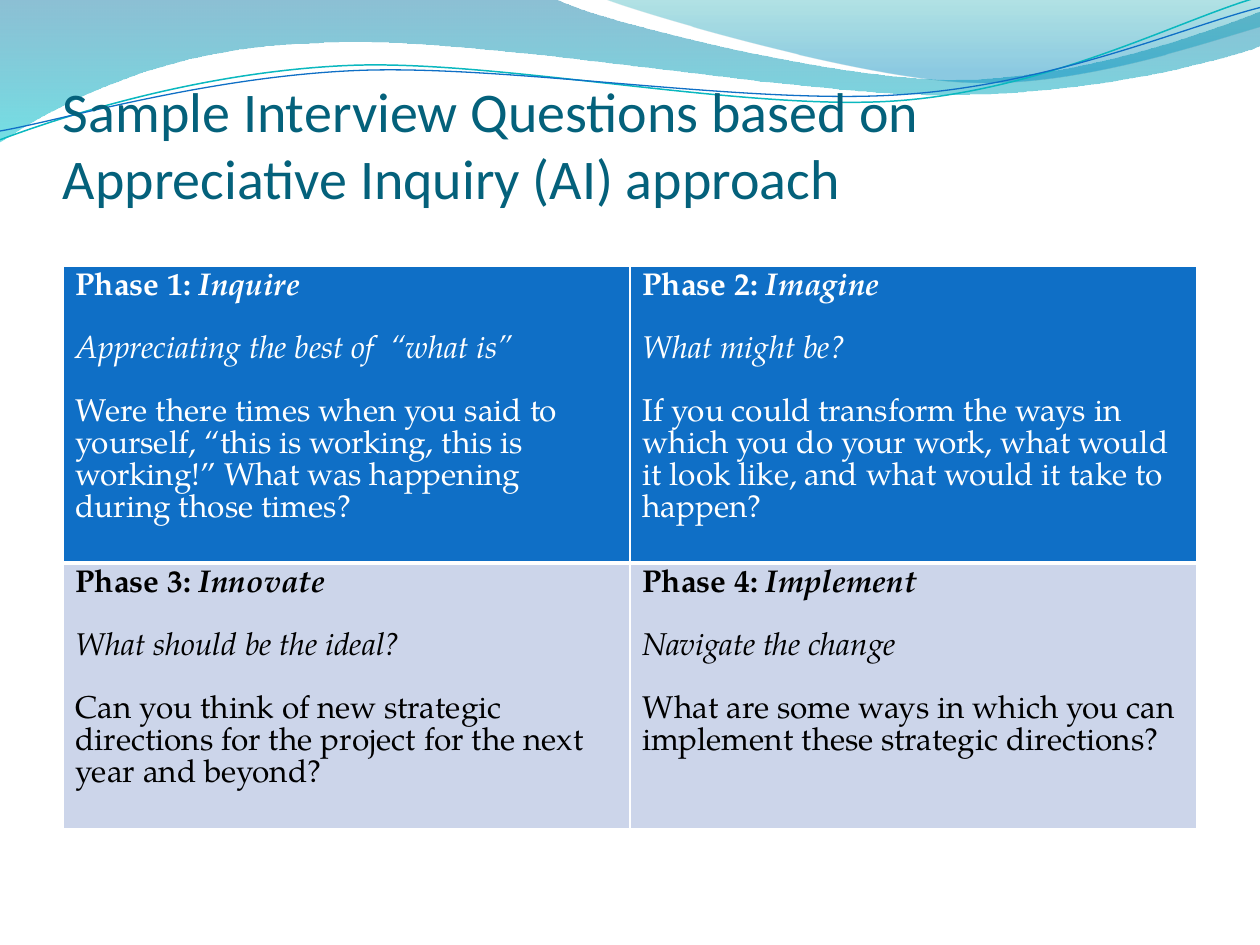
from lxml import etree
from pptx import Presentation
from pptx.dml.color import RGBColor
from pptx.enum.text import MSO_ANCHOR
from pptx.oxml.ns import qn
from pptx.util import Inches, Pt

BOTTOM = MSO_ANCHOR.BOTTOM
WIDTH, HEIGHT = Inches(10), Inches(7.5)
LEFT, CONTENT_WIDTH = 0.05, 0.9

WHITE = RGBColor(0xFF, 0xFF, 0xFF)
BLACK = RGBColor(0x00, 0x00, 0x00)
TITLE_TEAL = RGBColor(0x04, 0x61, 0x7B)
HEADER_BLUE = RGBColor(0x0F, 0x6F, 0xC6)
PALE_BLUE = RGBColor(0xCC, 0xD5, 0xEA)
LINE_TEAL = RGBColor(0x0A, 0xB8, 0xBF)
DEEP_BLUE = RGBColor(0x00, 0x74, 0xA1)
BRIGHT_CYAN = RGBColor(0x00, 0xC6, 0xCF)
DARK_CYAN = RGBColor(0x00, 0xA1, 0xA9)
SKY_BLUE = RGBColor(0x00, 0x8B, 0xBF)

TITLE_FONT, BODY_FONT = "Calibri", "TeX Gyre Pagella"
TITLE = "Sample Interview Questions based on Appreciative Inquiry (AI) approach"
ROW_HEIGHTS = (2.36, 2.11)
ROW_STYLES = ((HEADER_BLUE, WHITE, "a:lnB"), (PALE_BLUE, BLACK, "a:lnT"))
PHASES = (
    ("Inquire", "Appreciating the best of  “what is”",
     "Were there times when you said to yourself, “this is working, this is working!” "
     "What was happening during those times?"),
    ("Imagine", "What might be?",
     "If you could transform the ways in which you do your work, "
     "what would it look like, and what would it take to happen?"),
    ("Innovate", "What should be the ideal?",
     "Can you think of new strategic directions for the project for the next year and beyond?"),
    ("Implement", "Navigate the change",
     "What are some ways in which you can implement these strategic directions?"),
)

BANDS = (
    ([(0, 0), (4.4, -0.01), (4.76, 0.17, 6.64, 0.63, 7.58, 0.63),
      (8.53, 0.63, 9.58, 0.26, 10, 0.09), (10.01, 0.36),
      (9.83, 0.44, 8.7, 0.76, 7.46, 0.75), (6.22, 0.75, 3.82, 0.28, 2.57, 0.34),
      (1.29, 0.36, 0.46, 0.83, -0.01, 1.13)],
     ((0, DEEP_BLUE, 45), (1, BRIGHT_CYAN, 55))),
    ([(4.79, -0.01), (5.09, 0.11, 6.82, 0.62, 7.69, 0.65),
      (8.56, 0.69, 9.61, 0.32, 10, 0.21), (10, 0)],
     ((0, DARK_CYAN, 30), (0.8, SKY_BLUE, 45))),
)
WAVES = (
    ([(0, 1.11), (0.48, 0.93, 1.58, 0.57, 2.77, 0.52),
      (3.95, 0.47, 5.93, 0.89, 7.13, 0.8), (8.33, 0.71, 9.38, 0.15, 9.98, -0.02)],
     LINE_TEAL, 0.85),
    ([(0, 1.04), (0.47, 0.96, 1.64, 0.61, 2.83, 0.56),
      (4.03, 0.51, 5.97, 0.84, 7.17, 0.75), (8.36, 0.67, 9.41, 0.21, 10, 0.06)],
     HEADER_BLUE, 0.75),
)


def bend_segments(shape, segments):
    steps = iter(list(shape._element.spPr.iter(qn("a:lnTo"))))
    for segment in segments[1:]:
        step = next(steps)
        if len(segment) == 6:
            curve = etree.Element(qn("a:cubicBezTo"))
            step.addprevious(curve)
            for control in (step, next(steps), next(steps)):
                curve.append(control[0])
                control.getparent().remove(control)


def add_outline(slide, segments, close):
    points = [tuple(Inches(value) for value in segment[index:index + 2])
              for segment in segments for index in range(0, len(segment), 2)]
    builder = slide.shapes.build_freeform(*points[0])
    builder.add_line_segments(points[1:], close=close)
    shape = builder.convert_to_shape()
    shape.shadow.inherit = False
    bend_segments(shape, segments)
    return shape


def add_band(slide, segments, stops):
    shape = add_outline(slide, segments, close=True)
    shape.line.fill.background()
    shape.fill.gradient()
    shape.fill.gradient_angle = 270
    for stop, (position, color, _) in zip(shape.fill.gradient_stops, stops):
        stop.position = position
        stop.color.rgb = color
    colors = shape._element.spPr.iterfind(".//" + qn("a:gs") + "/" + qn("a:srgbClr"))
    for color_element, (_, _, opacity) in zip(colors, stops):
        etree.SubElement(color_element, qn("a:alpha")).set("val", str(opacity * 1000))


def add_wave(slide, segments, color, width):
    shape = add_outline(slide, segments, close=False)
    shape.fill.background()
    shape.line.color.rgb = color
    shape.line.width = Pt(width)


def add_text(paragraph, text, *, font, size, color, bold=False, italic=False):
    run = paragraph.add_run()
    run.text = text
    run.font.name = font
    run.font.size = Pt(size)
    run.font.color.rgb = color
    run.font.bold = bold
    run.font.italic = italic


def add_title(slide):
    box = slide.shapes.add_textbox(int(WIDTH * LEFT), Inches(0.58),
                                   int(WIDTH * CONTENT_WIDTH), Inches(1.09))
    frame = box.text_frame
    frame.word_wrap = True
    frame.vertical_anchor = BOTTOM
    frame.margin_left = frame.margin_right = frame.margin_bottom = 0
    add_text(frame.paragraphs[0], TITLE, font=TITLE_FONT, size=32, color=TITLE_TEAL)


def set_border(cell, side, color, width):
    border = etree.Element(qn(side), w=str(Pt(width)))
    fill = etree.SubElement(border, qn("a:solidFill"))
    etree.SubElement(fill, qn("a:srgbClr"), val=str(color))
    cell._tc.get_or_add_tcPr().insert(0, border)


def fill_phase(cell, number, phase, fill_color, text_color, divider_side):
    name, theme, question = phase
    cell.fill.solid()
    cell.fill.fore_color.rgb = fill_color
    set_border(cell, divider_side, WHITE, 3)
    style = {"font": BODY_FONT, "size": 18, "color": text_color}
    frame = cell.text_frame
    heading = frame.paragraphs[0]
    add_text(heading, f"Phase {number}: ", bold=True, **style)
    add_text(heading, name, bold=True, italic=True, **style)
    for text, italic in ((theme, True), (question, False)):
        paragraph = frame.add_paragraph()
        paragraph.space_before = Pt(17.75)
        add_text(paragraph, text, italic=italic, **style)
    for paragraph in frame.paragraphs:
        paragraph.line_spacing = Pt(18.25)


def add_phase_table(slide):
    frame = slide.shapes.add_table(2, 2, int(WIDTH * LEFT), Inches(2.11),
                                   int(WIDTH * CONTENT_WIDTH), Inches(sum(ROW_HEIGHTS)))
    table = frame.table
    table.horz_banding = False
    for row, height in zip(table.rows, ROW_HEIGHTS):
        row.height = Inches(height)
    for index, phase in enumerate(PHASES):
        row, column = divmod(index, 2)
        fill_phase(table.cell(row, column), index + 1, phase, *ROW_STYLES[row])


def main():
    presentation = Presentation()
    presentation.slide_width, presentation.slide_height = WIDTH, HEIGHT
    slide = presentation.slides.add_slide(presentation.slide_layouts[6])
    for segments, stops in BANDS:
        add_band(slide, segments, stops)
    for segments, color, width in WAVES:
        add_wave(slide, segments, color, width)
    add_title(slide)
    add_phase_table(slide)
    presentation.save("out.pptx")


if __name__ == "__main__":
    main()
